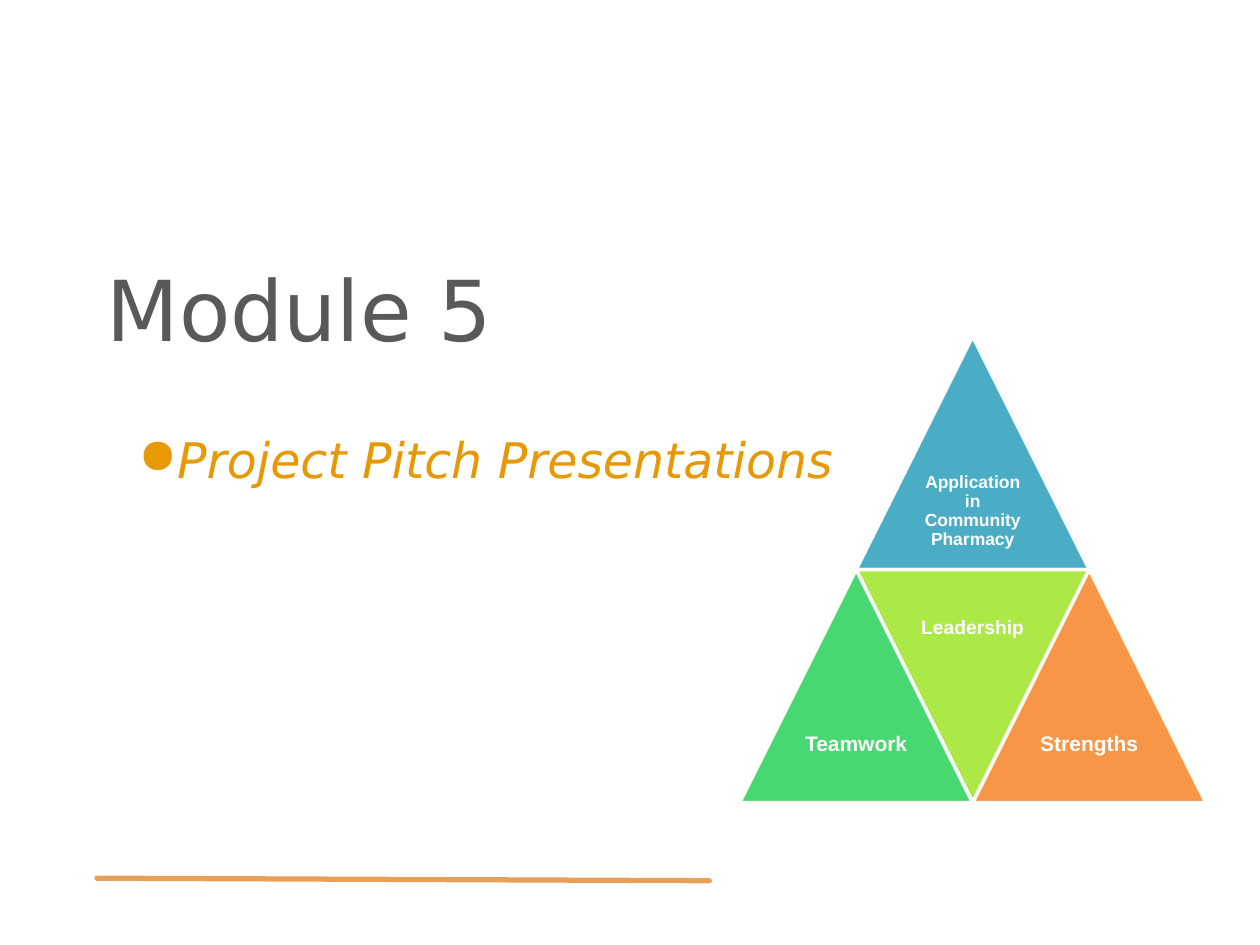
from lxml import etree
from pptx import Presentation
from pptx.dml.color import RGBColor
from pptx.enum.shapes import MSO_CONNECTOR, MSO_SHAPE
from pptx.enum.text import MSO_ANCHOR, PP_ALIGN
from pptx.oxml.ns import qn
from pptx.util import Inches, Pt


def color(hex_string):
    return RGBColor.from_string(hex_string)


def add_text(slide, box, text, size, font, hex_color, inset=0.1,
             anchor=MSO_ANCHOR.TOP, bold=False, italic=False):
    """Place a one-paragraph text box and return its paragraph."""
    frame = slide.shapes.add_textbox(*map(Inches, box)).text_frame
    frame.word_wrap = True
    frame.vertical_anchor = anchor
    frame.margin_left = frame.margin_right = Inches(inset)
    frame.margin_top = frame.margin_bottom = Inches(inset)
    frame.text = text
    paragraph = frame.paragraphs[0]
    style = paragraph.runs[0].font
    style.size, style.name = Pt(size), font
    style.bold, style.italic = bold, italic
    style.color.rgb = color(hex_color)
    return paragraph


def add_bullet(paragraph, symbol, hex_color, indent, hanging):
    properties = paragraph._p.get_or_add_pPr()
    properties.set("marL", str(Inches(indent)))
    properties.set("indent", str(-Inches(hanging)))
    bullet_color = etree.SubElement(properties, qn("a:buClr"))
    etree.SubElement(bullet_color, qn("a:srgbClr"), val=hex_color)
    etree.SubElement(properties, qn("a:buChar"), char=symbol)


def add_heading(slide, left, top):
    add_text(slide, (left, top, 8.5, 1.61), "Module 5", 48, "DejaVu Sans",
             "595959", anchor=MSO_ANCHOR.MIDDLE)
    subtitle = add_text(slide, (left, top + 1.67, 7.75, 0.6),
                        "Project Pitch Presentations", 28, "DejaVu Sans",
                        "E79805", italic=True)
    add_bullet(subtitle, "●", "E79805", 0.5, 0.25)


def add_footer_rule(slide, left, top, width, drop):
    rule = slide.shapes.add_connector(
        MSO_CONNECTOR.STRAIGHT, Inches(left), Inches(top),
        Inches(left + width), Inches(top + drop))
    rule.line.color.rgb = color("E6A057")
    rule.line.width = Pt(3)
    rule.line._get_or_add_ln().set("cap", "rnd")
    etree.SubElement(rule._element.spPr, qn("a:effectLst"))


def add_pyramid(slide, left, top, size):
    """Four equal triangles that together fill a square box."""
    side = size / 2
    # Label, font size, fill, column and row in half and whole sides, inverted
    pieces = [
        ("Application in Community Pharmacy", 10, "4BACC6", 1, 0, False),
        ("Teamwork", 12, "47D872", 0, 1, False),
        ("Leadership", 11, "ACE946", 1, 1, True),
        ("Strengths", 12, "F79646", 2, 1, False),
    ]
    for label, font_size, fill, column, row, inverted in pieces:
        x, y = left + column * side / 2, top + row * side
        triangle = slide.shapes.add_shape(
            MSO_SHAPE.ISOSCELES_TRIANGLE,
            *map(Inches, (x, y, side, side)))
        triangle.shadow.inherit = False
        triangle.rotation = 180 if inverted else 0
        triangle.fill.solid()
        triangle.fill.fore_color.rgb = color(fill)
        triangle.line.color.rgb = color("FFFFFF")
        triangle.line.width = Pt(2)

        # The label sits in the wide half of the triangle
        label_top = y if inverted else y + side / 2
        paragraph = add_text(
            slide, (x + side / 4, label_top, side / 2, side / 2), label,
            font_size, "Arial", "FFFFFF", inset=0.04,
            anchor=MSO_ANCHOR.MIDDLE, bold=True)
        paragraph.alignment = PP_ALIGN.CENTER
        paragraph.line_spacing = 0.9


def main():
    presentation = Presentation()
    presentation.slide_width = Inches(10)
    presentation.slide_height = Inches(7.5)
    slide = presentation.slides.add_slide(presentation.slide_layouts[6])
    add_footer_rule(slide, 0.77, 6.97, 4.86, 0.02)
    add_heading(slide, 0.75, 1.64)
    add_pyramid(slide, 5.87, 2.67, 3.7)
    presentation.save("out.pptx")


if __name__ == "__main__":
    main()
